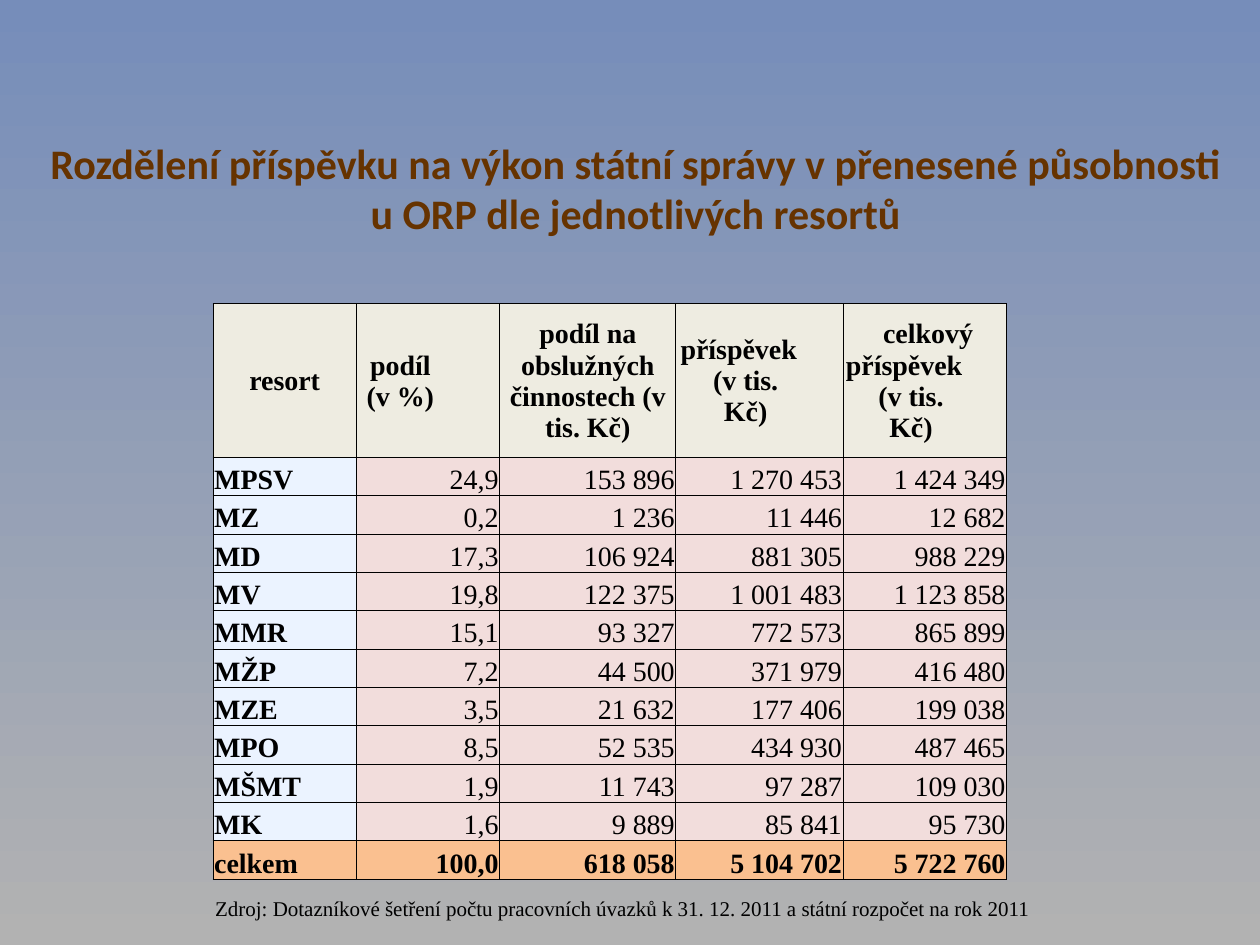
from dataclasses import dataclass

from lxml import etree
from pptx import Presentation
from pptx.dml.color import RGBColor
from pptx.enum import text as t
from pptx.oxml import ns
from pptx.util import Inches, Pt


@dataclass(frozen=True)
class Theme:
    sky: str = "768DBA"
    base: str = "B2B2B2"
    title: str = "663300"
    ink: str = "000000"
    head: str = "EEECE1"
    name: str = "EBF3FF"
    value: str = "F2DDDC"
    total: str = "FAC090"
    sans: str = "Calibri"
    serif: str = "Times New Roman"
    big: int = 24
    body: int = 16
    small: int = 12


THEME = Theme()
LEFT, MID, RIGHT = t.PP_ALIGN.LEFT, t.PP_ALIGN.CENTER, t.PP_ALIGN.RIGHT

TITLE = ("Rozdělení příspěvku na výkon státní správy v přenesené působnosti "
         "u ORP dle jednotlivých resortů")
SOURCE = ("Zdroj: Dotazníkové šetření počtu pracovních úvazků k 31. 12. 2011 "
          "a státní rozpočet na rok 2011")
COLS = [1.14, 1.14, 1.4, 1.33, 1.3]
HEAD_H = 1.22
# Each heading line is a text with its left and right indent in inches.
HEADS = [
    [("resort", 0, 0)],
    [("podíl", 0, 0.44), ("(v %)", 0, 0)],
    [("podíl na obslužných činnostech (v tis. Kč)", 0, 0)],
    [("příspěvek", 0, 0.33), ("(v tis. Kč)", 0.11, 0)],
    [("celkový", 0.05, 0), ("příspěvek", 0, 0.33), ("(v tis. Kč)", 0.11, 0)],
]
ROWS = [
    ("MPSV", "24,9", "153 896", "1 270 453", "1 424 349"),
    ("MZ", "0,2", "1 236", "11 446", "12 682"),
    ("MD", "17,3", "106 924", "881 305", "988 229"),
    ("MV", "19,8", "122 375", "1 001 483", "1 123 858"),
    ("MMR", "15,1", "93 327", "772 573", "865 899"),
    ("MŽP", "7,2", "44 500", "371 979", "416 480"),
    ("MZE", "3,5", "21 632", "177 406", "199 038"),
    ("MPO", "8,5", "52 535", "434 930", "487 465"),
    ("MŠMT", "1,9", "11 743", "97 287", "109 030"),
    ("MK", "1,6", "9 889", "85 841", "95 730"),
    ("celkem", "100,0", "618 058", "5 104 702", "5 722 760"),
]


def rgb(code):
    return RGBColor.from_string(code)


def write(para, words, face, size, color, bold=False, align=LEFT):
    para.alignment = align
    run = para.add_run()
    run.text = words
    font = run.font
    font.name, font.size, font.bold = face, Pt(size), bold
    font.color.rgb = rgb(color)


def border(cell):
    props = cell._tc.get_or_add_tcPr()
    for spot, side in enumerate(("lnL", "lnR", "lnT", "lnB")):
        line = etree.Element(ns.qn("a:" + side), w=str(Pt(0.5)))
        fill = etree.SubElement(line, ns.qn("a:solidFill"))
        etree.SubElement(fill, ns.qn("a:srgbClr"), val=THEME.ink)
        props.insert(spot, line)


def fill_cell(cell, lines, color, bold, align, anchor):
    cell.fill.solid()
    cell.fill.fore_color.rgb = rgb(color)
    cell.margin_left = cell.margin_right = cell.margin_top = Inches(0.01)
    cell.margin_bottom = 0
    cell.vertical_anchor = anchor
    frame = cell.text_frame
    for i, (words, left, right) in enumerate(lines):
        para = frame.add_paragraph() if i else frame.paragraphs[0]
        props = para._p.get_or_add_pPr()
        if left:
            props.set("marL", str(Inches(left)))
        if right:
            props.set("marR", str(Inches(right)))
        write(para, words, THEME.serif, THEME.body, THEME.ink, bold, align)
    border(cell)


def add_back(slide):
    fill = slide.background.fill
    fill.gradient()
    fill.gradient_angle = 270
    for stop, color in zip(fill.gradient_stops, (THEME.sky, THEME.base)):
        stop.color.rgb = rgb(color)


def add_title(slide, x, y, w, h):
    title = slide.shapes.title
    title.left, title.top, title.width, title.height = map(Inches, (x, y, w, h))
    frame = title.text_frame
    frame.word_wrap = True
    frame.auto_size = t.MSO_AUTO_SIZE.NONE
    frame.vertical_anchor = t.MSO_ANCHOR.TOP
    write(frame.paragraphs[0], TITLE, THEME.sans, THEME.big, THEME.title, True, MID)


def add_grid(slide, x, y, w, h):
    frame = slide.shapes.add_table(len(ROWS) + 1, len(COLS), *map(Inches, (x, y, w, h)))
    table = frame.table
    table.horz_banding = False
    for col, share in zip(table.columns, COLS):
        col.width = Inches(w * share / sum(COLS))
    for i, row in enumerate(table.rows):
        row.height = Inches((h - HEAD_H) / len(ROWS) if i else HEAD_H)
    for c, lines in enumerate(HEADS):
        fill_cell(table.cell(0, c), lines, THEME.head, True, MID, t.MSO_ANCHOR.MIDDLE)
    for r, row in enumerate(ROWS, 1):
        total = r == len(ROWS)
        for c, words in enumerate(row):
            color = THEME.total if total else THEME.value if c else THEME.name
            fill_cell(table.cell(r, c), [(words, 0, 0)], color, total or c == 0,
                      RIGHT if c else LEFT, t.MSO_ANCHOR.BOTTOM)


def add_source(slide, x, y, w, h):
    frame = slide.shapes.add_textbox(*map(Inches, (x, y, w, h))).text_frame
    frame.word_wrap = True
    write(frame.paragraphs[0], SOURCE, THEME.serif, THEME.small, THEME.ink)


def main():
    deck = Presentation()
    deck.slide_width, deck.slide_height = Inches(10), Inches(7.5)
    slide = deck.slides.add_slide(deck.slide_layouts[5])
    add_back(slide)
    add_title(slide, 0.2, 1.04, 9.69, 0.91)
    add_source(slide, 1.61, 7.06, 6.93, 0.3)
    add_grid(slide, 1.69, 2.41, 6.3, 4.57)
    deck.save("out.pptx")


if __name__ == "__main__":
    main()
